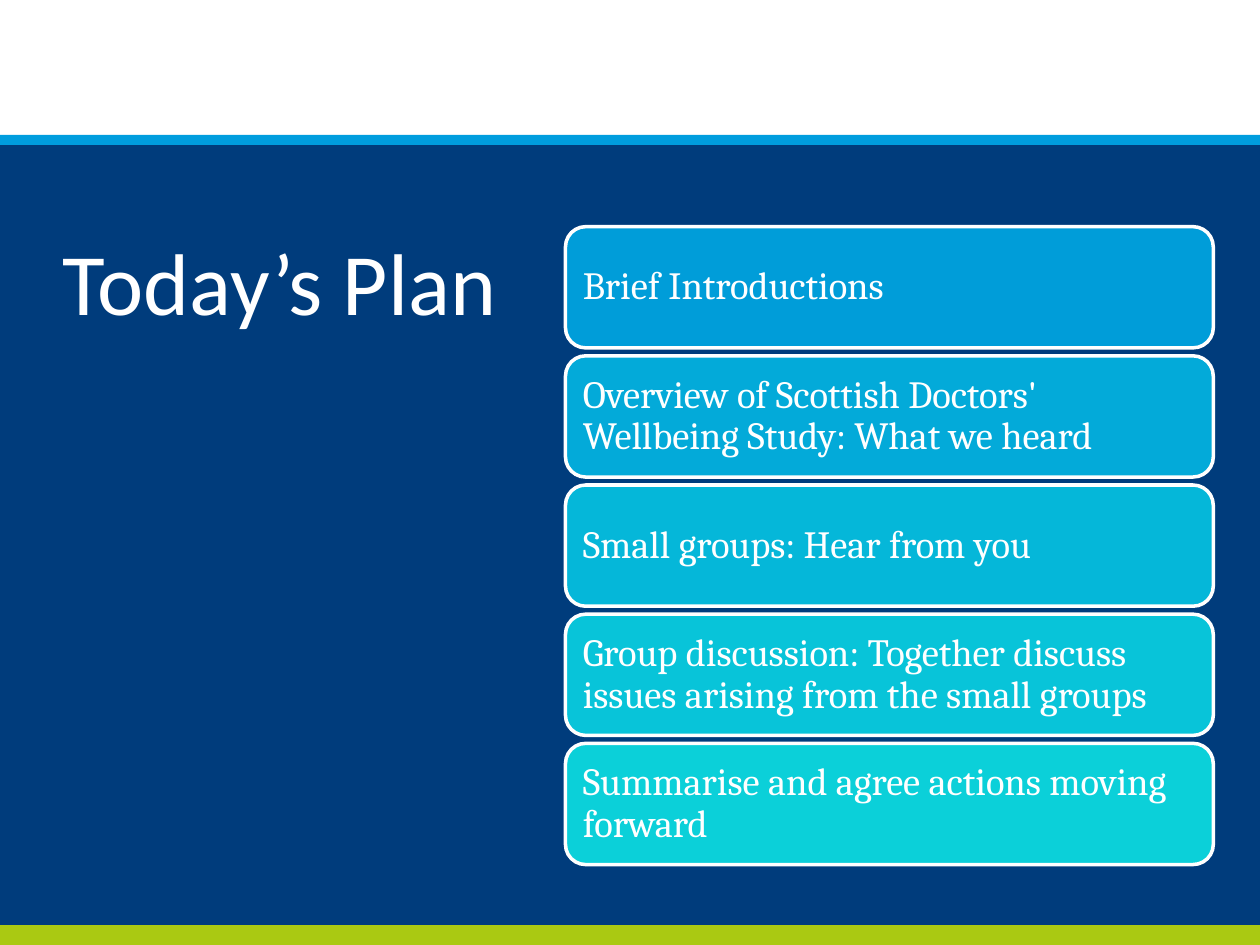
from dataclasses import dataclass

from pptx import Presentation
from pptx.dml.color import RGBColor
from pptx.enum.shapes import MSO_SHAPE as Shape
from pptx.enum.text import MSO_ANCHOR as Anchor, PP_ALIGN as Align
from pptx.util import Cm, Pt


@dataclass(frozen=True)
class Theme:
    navy: str = "003C7C"
    white: str = "FFFFFF"
    blue: str = "009DDE"
    lime: str = "AAC912"
    steps: tuple = ("009DD9", "03AAD9", "05B7D9", "08C4D9", "0BD0D9")
    title_font: str = "Calibri"
    step_font: str = "Cambria"
    title_size: int = 50
    step_size: int = 22
    outline: int = 2


@dataclass(frozen=True)
class Box:
    left: float
    top: float
    width: float
    height: float

    def lengths(self):
        return Cm(self.left), Cm(self.top), Cm(self.width), Cm(self.height)


THEME = Theme()
PAGE = Box(0, 0, 25.4, 19.05)
STEPS = (
    "Brief Introductions",
    "Overview of Scottish Doctors' Wellbeing Study: What we heard",
    "Small groups: Hear from you",
    "Group discussion: Together discuss issues arising from the small groups",
    "Summarise and agree actions moving forward",
)


def color(value):
    return RGBColor.from_string(value)


def add_block(page, kind, box, fill):
    block = page.shapes.add_shape(kind, *box.lengths())
    block.shadow.inherit = False
    block.fill.solid()
    block.fill.fore_color.rgb = color(fill)
    block.line.fill.background()
    return block


def write(shape, text, font, size, anchor, margins):
    frame = shape.text_frame
    frame.word_wrap = True
    frame.vertical_anchor = anchor
    (frame.margin_left, frame.margin_top,
     frame.margin_right, frame.margin_bottom) = map(Cm, margins)
    frame.text = text
    para = frame.paragraphs[0]
    para.alignment = Align.LEFT
    span = para.runs[0]
    span.font.name = font
    span.font.size = Pt(size)
    span.font.color.rgb = color(THEME.white)
    return para


def add_backdrop(page, box):
    page.background.fill.solid()
    page.background.fill.fore_color.rgb = color(THEME.navy)
    bands = (
        (0, 2.82, THEME.white),
        (2.72, 0.2, THEME.blue),
        (box.height - 0.4, 0.4, THEME.lime),
    )
    for top, height, fill in bands:
        band = Box(box.left, box.top + top, box.width, height)
        add_block(page, Shape.RECTANGLE, band, fill)


def add_title(page, box, text):
    title = page.shapes.add_textbox(*box.lengths())
    write(title, text, THEME.title_font, THEME.title_size,
          Anchor.BOTTOM, (0, 0.13, 0, 0))


def add_steps(page, box, steps, gap=0.16):
    height = (box.height - gap * (len(steps) - 1)) / len(steps)
    for index, (text, fill) in enumerate(zip(steps, THEME.steps)):
        top = box.top + index * (height + gap)
        step = add_block(page, Shape.ROUNDED_RECTANGLE,
                         Box(box.left, top, box.width, height), fill)
        step.line.color.rgb = color(THEME.white)
        step.line.width = Pt(THEME.outline)
        para = write(step, text, THEME.step_font, THEME.step_size,
                     Anchor.MIDDLE, (0.23,) * 4)
        para.line_spacing = 0.9


def main():
    deck = Presentation()
    deck.slide_width, deck.slide_height = Cm(PAGE.width), Cm(PAGE.height)
    page = deck.slides.add_slide(deck.slide_layouts[6])
    add_backdrop(page, PAGE)
    add_title(page, Box(1.27, 3.53, 10.13, 3.18), "Today’s Plan")
    add_steps(page, Box(11.4, 4.57, 13.06, 12.86), STEPS)
    deck.save("out.pptx")


if __name__ == "__main__":
    main()
